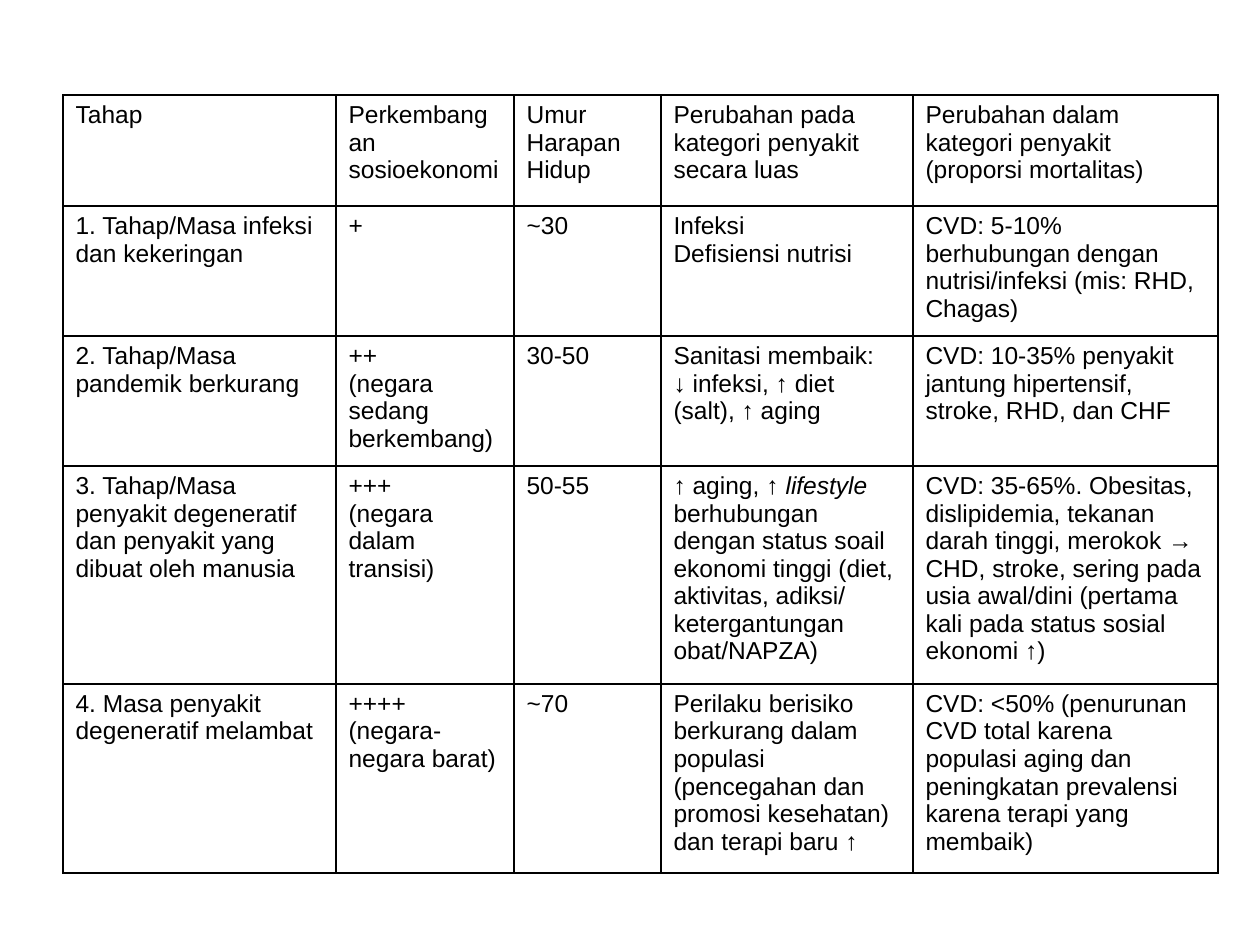
from dataclasses import dataclass

from lxml import etree
from pptx import Presentation
from pptx.dml.color import RGBColor
from pptx.oxml.ns import qn
from pptx.util import Emu, Pt

PX_PER_INCH = 126
EMU_PER_INCH = 914400
BLACK = RGBColor(0x00, 0x00, 0x00)
FONT_NAME = "Arial"
FONT_SIZE = Pt(14)
ITALIC_MARK = "*"
BORDER_WIDTHS = {
    "a:lnL": Pt(0.75),
    "a:lnR": Pt(0.75),
    "a:lnT": Pt(1),
    "a:lnB": Pt(1),
}
TABLE_LEFT, TABLE_TOP = 63, 95
COLUMN_WIDTHS = (273, 178, 147, 252, 305)


@dataclass(frozen=True)
class StageRow:
    height: int
    stage: str
    development: str
    life_expectancy: str
    broad_change: str
    mortality_change: str

    def texts(self) -> tuple[str, ...]:
        return (self.stage, self.development, self.life_expectancy,
                self.broad_change, self.mortality_change)


ROWS = (
    StageRow(
        111, "Tahap", "Perkembangan sosioekonomi", "Umur Harapan Hidup",
        "Perubahan pada kategori penyakit secara luas",
        "Perubahan dalam kategori penyakit (proporsi mortalitas)",
    ),
    StageRow(
        130, "1. Tahap/Masa infeksi dan kekeringan", "+", "~30",
        "Infeksi\nDefisiensi nutrisi",
        "CVD: 5-10% berhubungan dengan nutrisi/infeksi (mis: RHD, Chagas)",
    ),
    StageRow(
        130, "2. Tahap/Masa pandemik berkurang",
        "++\n(negara sedang berkembang)", "30-50",
        "Sanitasi membaik:\n↓ infeksi, ↑ diet (salt), ↑ aging",
        "CVD: 10-35% penyakit jantung hipertensif, stroke, RHD, dan CHF",
    ),
    StageRow(
        218,
        "3. Tahap/Masa penyakit degeneratif dan penyakit yang dibuat oleh manusia",
        "+++\n(negara dalam transisi)", "50-55",
        "↑ aging, ↑ *lifestyle* berhubungan dengan status soail ekonomi tinggi "
        "(diet, aktivitas, adiksi/ ketergantungan obat/NAPZA)",
        "CVD: 35-65%. Obesitas, dislipidemia, tekanan darah tinggi, merokok → "
        "CHD, stroke, sering pada usia awal/dini (pertama kali pada status "
        "sosial ekonomi ↑)",
    ),
    StageRow(
        189, "4. Masa penyakit degeneratif melambat",
        "++++\n(negara-negara barat)", "~70",
        "Perilaku berisiko berkurang dalam populasi (pencegahan dan promosi "
        "kesehatan) dan terapi baru ↑",
        "CVD: <50% (penurunan CVD total karena populasi aging dan peningkatan "
        "prevalensi karena terapi yang membaik)",
    ),
)


def px(length: int) -> Emu:
    return Emu(round(length * EMU_PER_INCH / PX_PER_INCH))


def write_text(cell, text: str) -> None:
    """Write one paragraph per line; text between marks is italic."""
    cell.text_frame.text = text.replace(ITALIC_MARK, "")
    for para, line in zip(cell.text_frame.paragraphs, text.split("\n")):
        pieces = line.split(ITALIC_MARK)
        para.runs[0].text = pieces[0]
        for piece in pieces[1:]:
            para.add_run().text = piece
        for index, span in enumerate(para.runs):
            span.font.name = FONT_NAME
            span.font.size = FONT_SIZE
            span.font.color.rgb = BLACK
            span.font.italic = index % 2 == 1


def draw_borders(cell) -> None:
    """Insert the border lines ahead of the fill, as the schema requires."""
    properties = cell._tc.get_or_add_tcPr()
    for index, (tag, width) in enumerate(BORDER_WIDTHS.items()):
        line = etree.Element(qn(tag), w=str(int(width)))
        fill = etree.SubElement(line, qn("a:solidFill"))
        etree.SubElement(fill, qn("a:srgbClr"), val=str(BLACK))
        properties.insert(index, line)


def add_stage_table(page) -> None:
    frame = page.shapes.add_table(
        len(ROWS), len(COLUMN_WIDTHS), px(TABLE_LEFT), px(TABLE_TOP),
        px(sum(COLUMN_WIDTHS)), px(sum(row.height for row in ROWS)),
    )
    table = frame.table
    table.first_row = False
    table.horz_banding = False
    for column, width in zip(table.columns, COLUMN_WIDTHS):
        column.width = px(width)
    for table_row, stage_row in zip(table.rows, ROWS):
        table_row.height = px(stage_row.height)
        for cell, text in zip(table_row.cells, stage_row.texts()):
            write_text(cell, text)
            cell.fill.background()
            draw_borders(cell)


def main() -> None:
    deck = Presentation()
    deck.slide_width = px(1260)
    deck.slide_height = px(945)
    blank_layout = deck.slide_layouts[6]
    add_stage_table(deck.slides.add_slide(blank_layout))
    deck.save("out.pptx")


if __name__ == "__main__":
    main()
